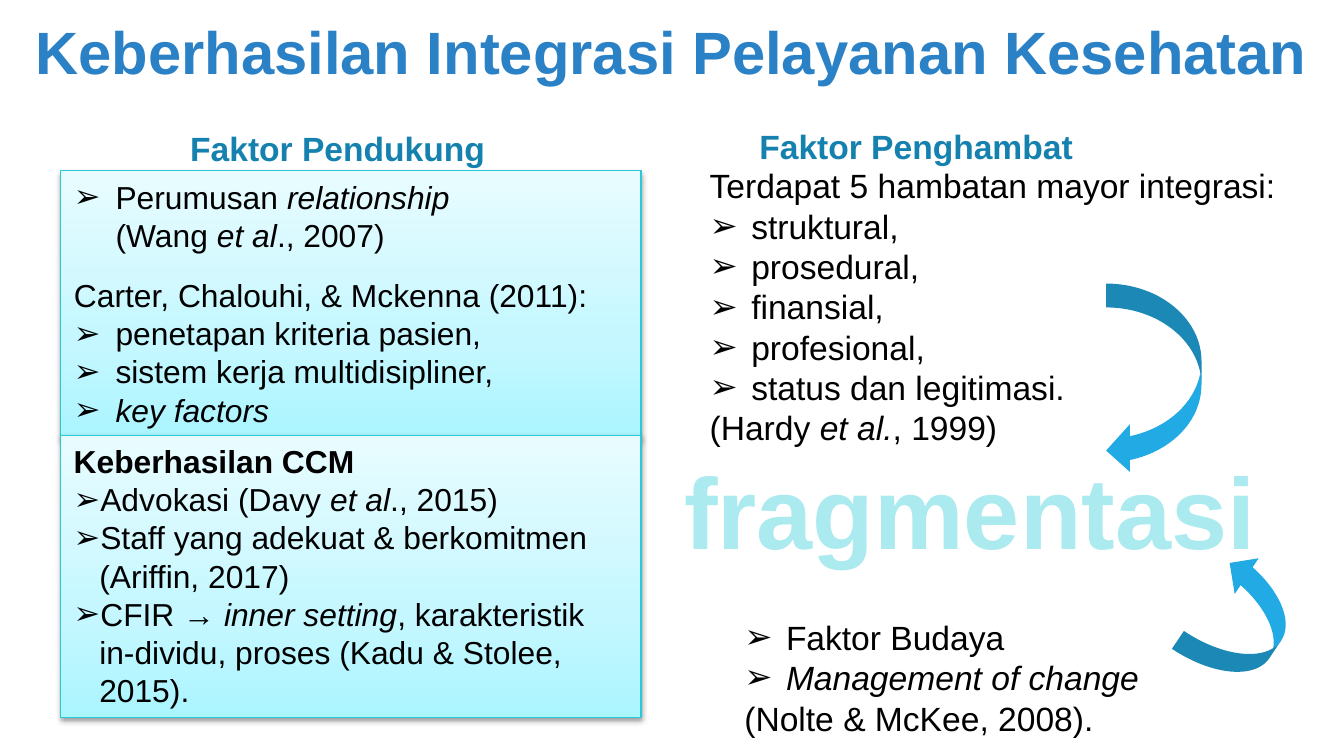
"""Build a slide on what helps and hinders integrated health care."""
from copy import deepcopy
from dataclasses import dataclass

from lxml.etree import SubElement
from pptx import Presentation
from pptx.dml.color import RGBColor
from pptx.enum.shapes import MSO_SHAPE
from pptx.enum.text import MSO_ANCHOR, MSO_AUTO_SIZE, PP_ALIGN
from pptx.oxml.ns import qn
from pptx.util import Inches, Pt


@dataclass(frozen=True)
class Theme:
    font: str = "Arial"
    title: str = "2A81C6"
    heading: str = "1581AF"
    text: str = "000000"
    accent: str = "ABEAEF"
    arrow: str = "22AAE4"
    border: str = "29C9D6"
    gradient: tuple = ((0, "ABF5FF"), (0.35, "C4F7FF"), (1, "E8FCFF"))
    title_size: int = 32
    heading_size: int = 18
    panel_size: int = 17
    accent_size: int = 54


theme = Theme()


def place(shape, left, top, width, height):
    shape.left, shape.top = Inches(left), Inches(top)
    shape.width, shape.height = Inches(width), Inches(height)


def write(shape, lines, size, color=theme.text, bold=False, align=PP_ALIGN.LEFT,
          anchor=MSO_ANCHOR.TOP, hanging=0.31):
    """Fill a shape; '- ' starts a bullet, '> ' an indented line, '*' toggles italics."""
    frame = shape.text_frame
    frame.word_wrap = True
    frame.auto_size = MSO_AUTO_SIZE.NONE
    frame.vertical_anchor = anchor
    for number, line in enumerate(lines):
        para = frame.paragraphs[0] if number == 0 else frame.add_paragraph()
        para.alignment = align
        para.space_before = para.space_after = Pt(0)
        bulleted, indented = line.startswith("- "), line.startswith("> ")
        properties = para._p.get_or_add_pPr()
        properties.set("marL", str(Inches(hanging if bulleted or indented else 0)))
        properties.set("indent", str(Inches(-hanging if bulleted else 0)))
        if bulleted:
            SubElement(properties, qn("a:buFont"), typeface=theme.font)
            SubElement(properties, qn("a:buChar"), char="➢")
        else:
            SubElement(properties, qn("a:buNone"))
        para.font.name, para.font.size, para.font.bold = theme.font, Pt(size), bold
        para.font.color.rgb = RGBColor.from_string(color)
        content = line[2:] if bulleted or indented else line
        for position, part in enumerate(content.split("*")):
            if part:
                span = para.add_run()
                span.text = part
                if position % 2:
                    span.font.italic = True


deck = Presentation()
deck.slide_width = Inches(10)
deck.slide_height = deck.slide_width * 9 // 16
page = deck.slides.add_slide(deck.slide_layouts.get_by_name("Comparison"))
title, support_heading, support, barrier_heading, barriers = page.placeholders

place(title, 0, 0, 10, 0.75)
write(title, ["Keberhasilan Integrasi Pelayanan Kesehatan"], theme.title_size,
      theme.title, True, PP_ALIGN.CENTER, MSO_ANCHOR.MIDDLE)
place(support_heading, 1.11, 0.9, 2.6, 0.4)
write(support_heading, ["Faktor Pendukung"], theme.heading_size, theme.heading, True,
      PP_ALIGN.RIGHT)
place(barrier_heading, 5.55, 0.89, 4.03, 0.54)
write(barrier_heading, ["Faktor Penghambat"], theme.heading_size, theme.heading, True)

place(support, 0.45, 1.27, 4.32, 1.99)
write(support, [
    "- Perumusan *relationship*",
    "> (Wang *et al*., 2007)",
    "Carter, Chalouhi, & Mckenna (2011):",
    "- penetapan kriteria pasien,",
    "- sistem kerja multidisipliner,",
    "- *key factors*",
], theme.panel_size)
support.text_frame.paragraphs[1].space_after = Pt(12)

success = page.shapes.add_shape(
    MSO_SHAPE.RECTANGLE, Inches(0.45), Inches(3.24), Inches(4.32), Inches(2.1))
write(success, [
    "Keberhasilan CCM",
    "- Advokasi (Davy *et al*., 2015)",
    "- Staff yang adekuat & berkomitmen",
    "> (Ariffin, 2017)",
    "- CFIR → *inner setting*, karakteristik in-dividu, proses (Kadu & Stolee, 2015).",
], theme.panel_size, hanging=0.19)
success.text_frame.paragraphs[0].font.bold = True

for panel in (support, success):
    panel.fill.gradient()
    panel.fill.gradient_angle = 90
    stop_list = next(panel._element.iter(qn("a:gsLst")))
    stop_list.insert(1, deepcopy(stop_list[0]))
    for stop, (position, color) in zip(panel.fill.gradient_stops, theme.gradient):
        stop.position = position
        stop.color.rgb = RGBColor.from_string(color)
    panel.line.color.rgb = RGBColor.from_string(theme.border)
    panel.line.width = Pt(0.75)
    panel.shadow.inherit = False
    effects = panel._element.spPr.find(qn("a:effectLst"))
    shadow = SubElement(effects, qn("a:outerShdw"), blurRad=str(Pt(3.1)),
                        dist=str(Pt(1.6)), dir="5400000", rotWithShape="0")
    shade = SubElement(shadow, qn("a:srgbClr"), val=theme.text)
    SubElement(shade, qn("a:alpha"), val="38000")

place(barriers, 5.18, 1.18, 4.53, 2.22)
write(barriers, [
    "Terdapat 5 hambatan mayor integrasi:",
    "- struktural,",
    "- prosedural,",
    "- finansial,",
    "- profesional,",
    "- status dan legitimasi.",
    "(Hardy *et al.*, 1999)",
], theme.heading_size)

fragmentation = page.shapes.add_textbox(Inches(4.97), Inches(3.29), Inches(4.49), Inches(1.01))
write(fragmentation, ["fragmentasi"], theme.accent_size, theme.accent, True, PP_ALIGN.CENTER)
fragmentation.text_frame.word_wrap = False

culture = page.shapes.add_textbox(Inches(5.44), Inches(4.54), Inches(3.31), Inches(1.01))
write(culture, [
    "- Faktor Budaya",
    "- *Management of change*",
    "(Nolte & McKee, 2008).",
], theme.heading_size)

for kind, left, top, width, height, rotation in (
    (MSO_SHAPE.CURVED_LEFT_ARROW, 8.23, 2.11, 0.71, 1.42, 0),
    (MSO_SHAPE.CURVED_UP_ARROW, 8.78, 4.3, 0.93, 0.64, 303.9),
):
    arrow = page.shapes.add_shape(
        kind, Inches(left), Inches(top), Inches(width), Inches(height))
    arrow.rotation = rotation
    arrow.fill.solid()
    arrow.fill.fore_color.rgb = RGBColor.from_string(theme.arrow)
    arrow.line.fill.background()
    arrow.shadow.inherit = False

deck.save("out.pptx")
